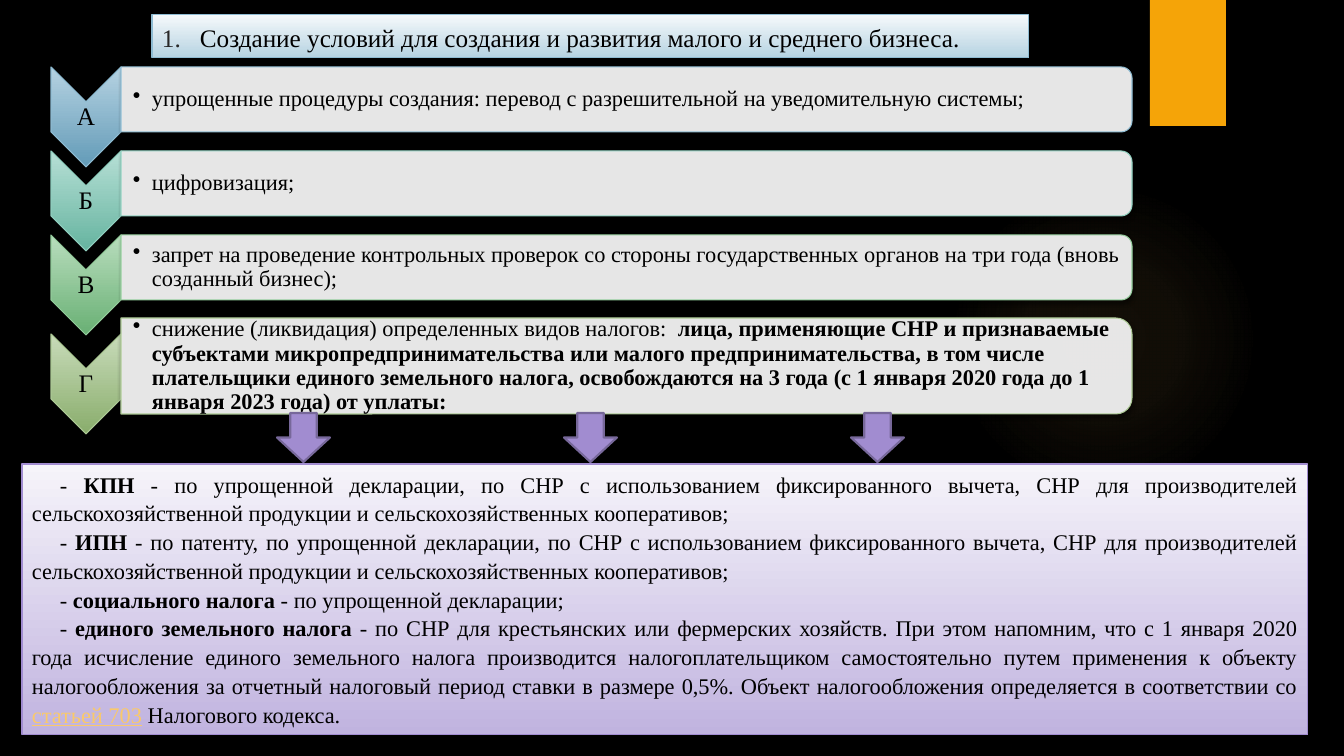
from lxml.etree import SubElement
from pptx import Presentation
from pptx.dml.color import RGBColor
from pptx.enum.shapes import MSO_SHAPE
from pptx.enum.text import MSO_ANCHOR, PP_ALIGN
from pptx.oxml import parse_xml
from pptx.oxml.ns import nsdecls, qn
from pptx.util import Emu, Pt

SLIDE_W, SLIDE_H = 1344, 756
PX = 12192000 / SLIDE_W
FONT = "Times New Roman"
BLACK, LINK, PURPLE = "000000", "FAC96A", "A18CD0"

# letter, gradient top, gradient bottom, outline, chevron top, bar top, bar height, runs
STEPS = [
    ("А", "B5D2E1", "639BB8", "8EBBD2", 67, 67, 65,
     [("упрощенные процедуры создания: перевод с разрешительной на уведомительную системы;", False)]),
    ("Б", "B6DFD5", "66B4A0", "90CFBF", 151, 151, 65,
     [("цифровизация;", False)]),
    ("В", "B8DDBD", "69B074", "93CC9B", 235, 235, 65,
     [("запрет на проведение контрольных проверок со стороны государственных органов "
       "на три года (вновь созданный бизнес);", False)]),
    ("Г", "C8DBB9", "89AD6C", "ACC995", 334, 318, 96,
     [("снижение (ликвидация) определенных видов налогов:  ", False),
      ("лица, применяющие СНР и признаваемые субъектами микропредпринимательства или "
       "малого предпринимательства, в том числе плательщики единого земельного налога, "
       "освобождаются на 3 года (с 1 января 2020 года до 1 января 2023 года) от уплаты:", True)]),
]

TAXES = [
    ("КПН", " - по упрощенной декларации, по СНР с использованием фиксированного вычета, СНР для "
     "производителей сельскохозяйственной продукции и сельскохозяйственных кооперативов;"),
    ("ИПН", " - по патенту, по упрощенной декларации, по СНР с использованием фиксированного вычета, "
     "СНР для производителей сельскохозяйственной продукции и сельскохозяйственных кооперативов;"),
    ("социального налога", " - по упрощенной декларации;"),
    ("единого земельного налога", " - по СНР для крестьянских или фермерских хозяйств. При этом "
     "напомним, что с 1 января 2020 года исчисление единого земельного налога производится "
     "налогоплательщиком самостоятельно путем применения к объекту налогообложения за отчетный "
     "налоговый период ставки в размере 0,5%. Объект налогообложения определяется в "
     "соответствии со "),
]


def px(n):
    return Emu(round(n * PX))


def rgb(color):
    return RGBColor.from_string(color)


def add_box(slide, kind, x, y, w, h, line=None, weight=0.75, turned=False):
    """Add a shape that shows in the given box, even when turned by 90 degrees."""
    if turned:
        x, y, w, h = x + (w - h) / 2, y + (h - w) / 2, h, w
    s = slide.shapes.add_shape(kind, px(x), px(y), px(w), px(h))
    s.rotation = 90 if turned else 0
    s.shadow.inherit = False
    if line:
        s.line.color.rgb = rgb(line)
        s.line.width = Pt(weight)
    else:
        s.line.fill.background()
    return s


def fill_solid(s, color, alpha=None):
    s.fill.solid()
    s.fill.fore_color.rgb = rgb(color)
    if alpha:
        clr = s._element.spPr.find(qn("a:solidFill"))[0]
        SubElement(clr, qn("a:alpha"), val=str(alpha * 1000))


def fill_downward(s, top, bottom):
    s.fill.gradient()
    s.fill.gradient_angle = 270
    for stop, color in zip(s.fill.gradient_stops, (top, bottom)):
        stop.color.rgb = rgb(color)
    s._element.spPr.find(qn("a:gradFill")).set("rotWithShape", "0")


def add_shadow(s, alpha, blur, dist):
    effects = s._element.spPr.find(qn("a:effectLst"))
    shadow = SubElement(effects, qn("a:outerShdw"), blurRad=str(Pt(blur)), dist=str(Pt(dist)),
                        dir="5400000", algn="ctr", rotWithShape="0")
    clr = SubElement(shadow, qn("a:srgbClr"), val=BLACK)
    SubElement(clr, qn("a:alpha"), val=str(alpha * 1000))


def add_text(slide, x, y, w, h, left=1):
    tf = slide.shapes.add_textbox(px(x), px(y), px(w), px(h)).text_frame
    tf.word_wrap = True
    tf.vertical_anchor = MSO_ANCHOR.MIDDLE
    tf.margin_left = px(left)
    tf.margin_top = tf.margin_right = tf.margin_bottom = px(1)
    return tf


def format_paragraph(p, align, spacing, margin=0, indent=0):
    p.alignment = align
    p.line_spacing = spacing
    pPr = p._p.get_or_add_pPr()
    pPr.set("marL", str(px(margin)))
    pPr.set("indent", str(px(indent)))
    return pPr


def add_run(p, text, size=16, bold=False, color=BLACK, underline=False):
    r = p.add_run()
    r.text = text
    r.font.name = FONT
    r.font.size = Pt(size)
    r.font.bold = bold
    r.font.underline = underline
    r.font.color.rgb = rgb(color)


def backdrop(slide):
    slide.background.fill.solid()
    slide.background.fill.fore_color.rgb = rgb(BLACK)
    glow = add_box(slide, MSO_SHAPE.OVAL, 949, 184, 310, 310)
    stops = "".join(f'<a:gs pos="{pos}000"><a:srgbClr val="{LINK}"><a:alpha val="{alpha}000"/>'
                    "</a:srgbClr></a:gs>" for pos, alpha in ((0, 7), (36, 6), (69, 0)))
    glow._element.spPr.find(qn("a:prstGeom")).addnext(parse_xml(
        f'<a:gradFill {nsdecls("a")}><a:gsLst>{stops}</a:gsLst><a:path path="circle">'
        '<a:fillToRect l="50000" t="50000" r="50000" b="50000"/></a:path></a:gradFill>'))
    tab = add_box(slide, MSO_SHAPE.RECTANGLE, 1150, 0, 76, 126)
    fill_solid(tab, "F5A408")
    add_shadow(tab, 45, 3, 2)


def heading(slide, x, y, w, h):
    s = add_box(slide, MSO_SHAPE.RECTANGLE, x, y, w, h, "8EBBD2")
    fill_downward(s, "F5F9FB", "B5D2E1")
    tf = s.text_frame
    tf.vertical_anchor = MSO_ANCHOR.TOP
    p = tf.paragraphs[0]
    pPr = format_paragraph(p, PP_ALIGN.JUSTIFY, 1.07, 38, -38)
    p.space_after = Pt(7.5)
    SubElement(SubElement(pPr, qn("a:buClr")), qn("a:srgbClr"), val="282828")
    SubElement(pPr, qn("a:buAutoNum"), type="arabicPeriod")
    add_run(p, "Создание условий для создания и развития малого и среднего бизнеса.", 18)


def step(slide, x, w, letter, top, bottom, line, chevron_y, bar_y, bar_h, runs):
    chevron_w, chevron_h = 70, 100
    s = add_box(slide, MSO_SHAPE.CHEVRON, x, chevron_y, chevron_w, chevron_h, line, turned=True)
    fill_downward(s, top, bottom)
    add_shadow(s, 60, 5, 3)
    p = add_text(slide, x, chevron_y + 35, chevron_w, 30).paragraphs[0]
    format_paragraph(p, PP_ALIGN.CENTER, 0.9)
    add_run(p, letter, 18)

    bar_x, bar_w = x + chevron_w, w - chevron_w
    s = add_box(slide, MSO_SHAPE.ROUND_2_SAME_RECTANGLE, bar_x, bar_y, bar_w, bar_h, line, turned=True)
    fill_solid(s, "FFFFFF", 90)
    add_shadow(s, 45, 3, 2)
    p = add_text(slide, bar_x, bar_y + 3, bar_w - 4, bar_h - 6, 12).paragraphs[0]
    pPr = format_paragraph(p, PP_ALIGN.LEFT, 0.9, 19, -19)
    SubElement(pPr, qn("a:buChar"), char="•")
    for text, bold in runs:
        add_run(p, text, bold=bold)


def tax_panel(slide, x, y, w, h):
    s = add_box(slide, MSO_SHAPE.RECTANGLE, x, y, w, h, PURPLE)
    fill_downward(s, "F6F4FA", "C0B3DF")
    tf = s.text_frame
    tf.vertical_anchor = MSO_ANCHOR.TOP
    for i, (tax, rule) in enumerate(TAXES):
        p = tf.add_paragraph() if i else tf.paragraphs[0]
        format_paragraph(p, PP_ALIGN.JUSTIFY, 1.07, indent=28)
        add_run(p, "- ")
        add_run(p, tax, bold=True)
        add_run(p, rule)
    add_run(p, "статьей 703", color=LINK, underline=True)
    add_run(p, " Налогового кодекса.")


def arrows(slide, x, y, pitch, count):
    for i in range(count):
        s = add_box(slide, MSO_SHAPE.RIGHT_ARROW, x + i * pitch, y, 53, 49, "77689A", 1.5, turned=True)
        fill_solid(s, PURPLE)


def main():
    prs = Presentation()
    prs.slide_width, prs.slide_height = px(SLIDE_W), px(SLIDE_H)
    slide = prs.slides.add_slide(prs.slide_layouts[6])
    backdrop(slide)
    heading(slide, 152, 15, 877, 43)
    for row in STEPS:
        step(slide, 51, 1081, *row)
    tax_panel(slide, 22, 464, 1286, 271)
    arrows(slide, 277, 413, 287, 3)
    prs.save("out.pptx")


if __name__ == "__main__":
    main()
